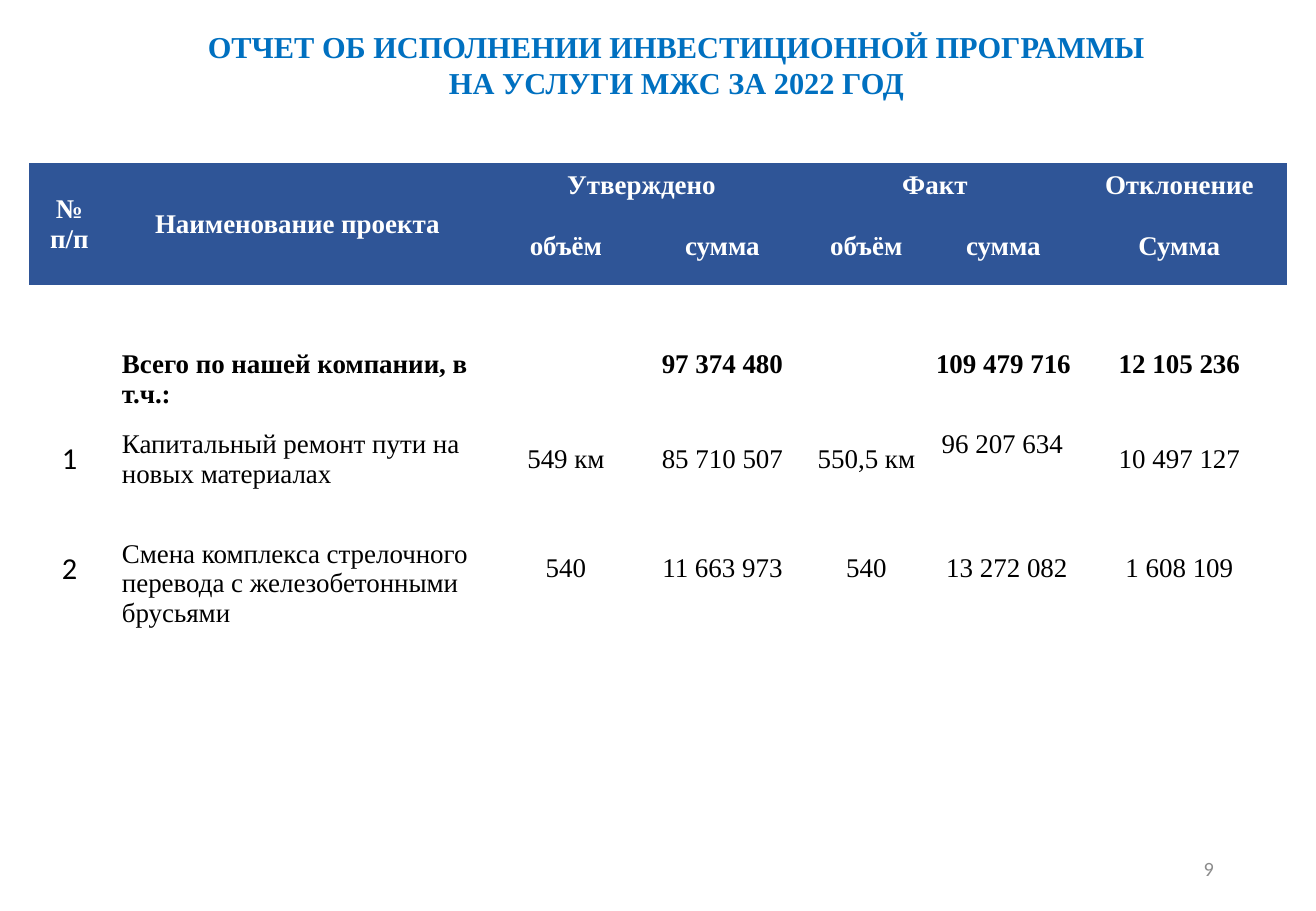
from dataclasses import dataclass
from typing import Any

from pptx import Presentation, util as u
from pptx.dml.color import RGBColor
from pptx.enum import text
from pptx.oxml import ns

SCALE = 7526
NO_STYLE = "{2D5ABB26-0587-4C30-8999-92F81FD0307C}"
CENTER, LEFT, RIGHT = text.PP_ALIGN.CENTER, text.PP_ALIGN.LEFT, text.PP_ALIGN.RIGHT
MIDDLE, TOP = text.MSO_ANCHOR.MIDDLE, text.MSO_ANCHOR.TOP


@dataclass(frozen=True)
class Theme:
    serif: str = "Times New Roman"
    sans: str = "Calibri"
    title: str = "0070C0"
    header: str = "2F5597"
    paper: str = "FFFFFF"
    ink: str = "000000"
    muted: str = "8C8C8C"
    large: int = 18
    body: int = 16
    small: int = 12


THEME = Theme()


@dataclass(frozen=True)
class Style:
    color: str = THEME.ink
    size: int = THEME.body
    name: str = THEME.serif
    bold: bool = False
    align: Any = CENTER


@dataclass(frozen=True)
class Label:
    x: int
    y: int
    width: int
    height: int
    lines: tuple[str, ...]
    style: Style
    anchor: Any
    right: int = 12


@dataclass(frozen=True)
class Entry:
    row: int
    column: int
    words: str
    style: Style
    margins: tuple[int, int, int, int] = (0, 0, 0, 0)
    span: tuple[int, int] = (1, 1)


HEADER = Style(THEME.paper, bold=True)
TOTAL = Style(bold=True)
TOTAL_NAME = Style(bold=True, align=LEFT)
NAME = Style(align=LEFT)
VALUE = Style()
FACT = Style(align=RIGHT)
NUMBER = Style(size=THEME.large, name=THEME.sans)

LABELS = (
    Label(930, 844, 296, 49, ("9",), Style(THEME.muted, THEME.small, THEME.sans, align=RIGHT), MIDDLE),
    Label(113, 22, 1141, 86,
          ("ОТЧЕТ ОБ ИСПОЛНЕНИИ ИНВЕСТИЦИОННОЙ ПРОГРАММЫ", "НА УСЛУГИ МЖС ЗА 2022 ГОД"),
          Style(THEME.title, THEME.large, bold=True), TOP, 26),
)
COLUMNS = (81, 375, 162, 151, 137, 137, 215)
ROWS = (44, 78, 128, 92, 128, 90, 90)
HEADER_ROWS = 2
SUBHEADS = ("объём", "сумма", "объём", "сумма", "Сумма")
ENTRIES = (
    Entry(0, 0, "№ п/п", HEADER, (12, 0, 12, 0), (2, 1)),
    Entry(0, 1, "Наименование проекта", HEADER, span=(2, 1)),
    Entry(0, 2, "Утверждено", HEADER, span=(1, 2)),
    Entry(0, 4, "Факт", HEADER, span=(1, 2)),
    Entry(0, 6, "Отклонение", HEADER),
    *(Entry(1, column, words, HEADER) for column, words in enumerate(SUBHEADS, 2)),
    Entry(2, 1, "Всего по нашей компании, в т.ч.:", TOTAL_NAME, (12, 60, 0, 0)),
    Entry(2, 3, "97 374 480", TOTAL, (0, 30, 0, 0)),
    Entry(2, 5, "109 479 716", TOTAL, (0, 30, 0, 0)),
    Entry(2, 6, "12 105 236", TOTAL, (0, 30, 0, 0)),
    Entry(3, 0, "1", NUMBER),
    Entry(3, 1, "Капитальный ремонт пути на новых материалах", NAME, (12, 0, 0, 0)),
    Entry(3, 2, "549 км", VALUE),
    Entry(3, 3, "85 710 507", VALUE),
    Entry(3, 4, "550,5 км", VALUE),
    Entry(3, 5, "96 207 634", FACT, (0, 0, 9, 30)),
    Entry(3, 6, "10 497 127", VALUE),
    Entry(4, 0, "2", NUMBER),
    Entry(4, 1, "Смена комплекса стрелочного перевода с железобетонными брусьями", NAME, (12, 30, 0, 0)),
    Entry(4, 2, "540", VALUE),
    Entry(4, 3, "11 663 973", VALUE),
    Entry(4, 4, "540", VALUE),
    Entry(4, 5, "13 272 082", VALUE, (7, 0, 0, 0)),
    Entry(4, 6, "1 608 109", VALUE),
)


def px(value: int) -> u.Emu:
    return u.Emu(value * SCALE)


def apply(target: Any, values: dict[str, Any]) -> None:
    for key, value in values.items():
        setattr(target, key, value)


def set_margins(target: Any, margins: tuple[int, int, int, int]) -> None:
    sides = ("margin_left", "margin_top", "margin_right", "margin_bottom")
    apply(target, dict(zip(sides, map(px, margins))))


def write(frame: Any, lines: tuple[str, ...], style: Style) -> None:
    for index, line in enumerate(lines):
        para = frame.paragraphs[0] if index == 0 else frame.add_paragraph()
        para.alignment = style.align
        span = para.add_run()
        span.text = line
        apply(span.font, {"name": style.name, "size": u.Pt(style.size), "bold": style.bold})
        span.font.color.rgb = RGBColor.from_string(style.color)


def draw_label(page: Any, label: Label) -> None:
    box = page.shapes.add_textbox(*map(px, (label.x, label.y, label.width, label.height)))
    apply(box.text_frame, {"word_wrap": True, "vertical_anchor": label.anchor})
    set_margins(box.text_frame, (12, 6, label.right, 6))
    write(box.text_frame, label.lines, label.style)


def draw_table(page: Any, x: int, y: int) -> None:
    frame = page.shapes.add_table(len(ROWS), len(COLUMNS), px(x), px(y), px(sum(COLUMNS)), px(sum(ROWS)))
    table = frame.table
    apply(table, {"first_row": False, "horz_banding": False})
    for style_id in frame.element.iter(ns.qn("a:tableStyleId")):
        style_id.text = NO_STYLE
    for column, width in zip(table.columns, COLUMNS):
        column.width = px(width)
    for index, (row, height) in enumerate(zip(table.rows, ROWS)):
        row.height = px(height)
        for cell in row.cells:
            set_margins(cell, (0, 0, 0, 0))
            cell.fill.solid()
            color = THEME.header if index < HEADER_ROWS else THEME.paper
            cell.fill.fore_color.rgb = RGBColor.from_string(color)
    for entry in ENTRIES:
        cell = table.cell(entry.row, entry.column)
        if entry.span != (1, 1):
            down, across = entry.span
            cell.merge(table.cell(entry.row + down - 1, entry.column + across - 1))
        cell.vertical_anchor = MIDDLE
        set_margins(cell, entry.margins)
        write(cell.text_frame, (entry.words,), entry.style)


def main() -> None:
    deck = Presentation()
    apply(deck, {"slide_width": px(1316), "slide_height": px(911)})
    page = deck.slides.add_slide(deck.slide_layouts[6])
    for label in LABELS:
        draw_label(page, label)
    draw_table(page, 29, 163)
    deck.save("out.pptx")


if __name__ == "__main__":
    main()
